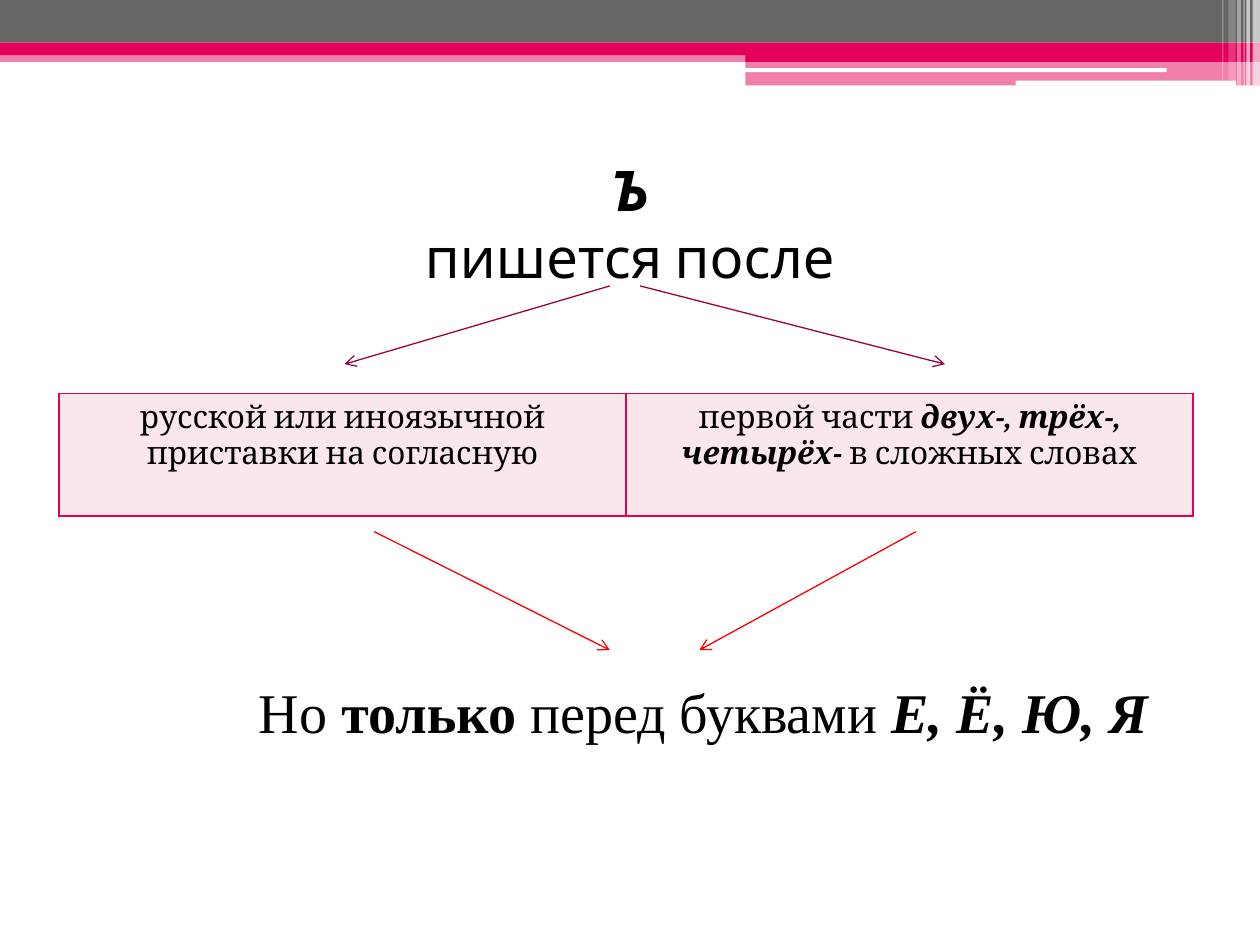
from lxml.etree import SubElement
from pptx import Presentation
from pptx.dml.color import RGBColor
from pptx.enum.shapes import MSO_CONNECTOR, MSO_SHAPE
from pptx.enum.text import MSO_ANCHOR, PP_ALIGN
from pptx.oxml.ns import qn
from pptx.util import Pt

COLORS = {"pink": "E40059", "gray": "666666", "white": "FFFFFF", "black": "000000",
          "cell": "FAE7EA", "plum": "9C0042", "red": "FF0000"}

# Content: each paragraph is a list of (text, style) runs, b = bold, i = italic
TITLE = [[("Ъ", "bi"), ("\n", ""), ("пишется после", "")]]
CELLS = [
    [[("русской или иноязычной", "")], [("приставки на согласную", "")]],
    [[("первой части ", ""), ("двух-, трёх-, четырёх-", "bi"), (" в сложных словах", "")]],
]
CONCLUSION = [[("Но ", ""), ("только", "b"), (" перед буквами ", ""), ("Е, Ё, Ю, Я", "bi")]]

# Header decoration: left, top, width, height, color, opacity in percent
BANDS = [
    (0, 28.8, 720, 6.6, "pink", 50),
    (0, 0, 720, 24.4, "gray", 100),
    (0, 24.4, 720, 7.2, "pink", 100),
    (426, 28.2, 294, 7.2, "pink", 100),
    (426, 34.6, 294, 14.2, "pink", 50),
]
BARS = [(425.5, 39, 241.2, 2.2), (580.3, 46.1, 126, 2.9)]
STRIPES = [  # left, width, height, opacity
    (715.8, 4.2, 48.8, 65), (712.2, 2.1, 48.8, 65), (710.6, 0.7, 48.8, 60),
    (707, 2.1, 48.8, 40), (702, 4.2, 46.1, 20), (698.4, 0.7, 46.1, 30),
]
ARROWS = [  # start, end, color
    ((348.5, 163.4), (196.9, 208.1), "plum"),
    ((365.8, 163.4), (540, 208.1), "plum"),
    ((523.4, 303.8), (399.6, 371.5), "red"),
    ((213.8, 303.8), (348.5, 371.5), "red"),
]


def rgb(name):
    return RGBColor.from_string(COLORS[name])


def write_text(frame, paragraphs, *, font, size, color="black"):
    frame.word_wrap = True
    for index, runs in enumerate(paragraphs):
        paragraph = frame.add_paragraph() if index else frame.paragraphs[0]
        paragraph.alignment = PP_ALIGN.CENTER
        for text, style in runs:
            if text == "\n":
                paragraph.add_line_break()
                continue
            run = paragraph.add_run()
            run.text = text
            run.font.name, run.font.size = font, Pt(size)
            run.font.bold, run.font.italic = "b" in style, "i" in style
            run.font.color.rgb = rgb(color)


def add_text_box(slide, box, paragraphs, *, left_inset=7.2, bottom_inset=3.6, **text_format):
    frame = slide.shapes.add_textbox(*map(Pt, box)).text_frame
    frame.vertical_anchor = MSO_ANCHOR.MIDDLE
    frame.margin_left, frame.margin_bottom = Pt(left_inset), Pt(bottom_inset)
    write_text(frame, paragraphs, **text_format)


def add_block(slide, box, color, opacity=100, kind=MSO_SHAPE.RECTANGLE):
    shape = slide.shapes.add_shape(kind, *map(Pt, box))
    shape.shadow.inherit = False
    shape.line.fill.background()
    shape.fill.solid()
    shape.fill.fore_color.rgb = rgb(color)
    if opacity < 100:
        fill_color = shape.fill._xPr.find(".//" + qn("a:srgbClr"))
        SubElement(fill_color, qn("a:alpha"), val=str(opacity * 1000))


def add_arrow(slide, start, end, color):
    arrow = slide.shapes.add_connector(MSO_CONNECTOR.STRAIGHT, *map(Pt, start + end))
    arrow.line.color.rgb = rgb(color)
    arrow.line.width = Pt(0.75)
    SubElement(arrow.line._get_or_add_ln(), qn("a:tailEnd"), type="arrow")
    SubElement(arrow._element.spPr, qn("a:effectLst"))


def add_borders(cell, color, width):
    properties = cell._tc.get_or_add_tcPr()
    for side in ("lnL", "lnR", "lnT", "lnB"):
        line = SubElement(properties, qn(f"a:{side}"), w=str(Pt(width)))
        SubElement(SubElement(line, qn("a:solidFill")), qn("a:srgbClr"), val=COLORS[color])


def main():
    presentation = Presentation()
    presentation.slide_width, presentation.slide_height = Pt(720), Pt(540)
    slide = presentation.slides.add_slide(presentation.slide_layouts[6])

    # Header
    for *box, color, opacity in BANDS:
        add_block(slide, box, color, opacity)
    for box in BARS:
        add_block(slide, box, "white", kind=MSO_SHAPE.ROUNDED_RECTANGLE)
    for left, width, height, opacity in STRIPES:
        add_block(slide, (left, 0, width, height), "white", opacity)

    # Title, centred above the arrows
    add_text_box(slide, (36, 67.7, 648, 157.7), TITLE, bottom_inset=42, font="Cabin", size=32)

    # Table with the two cases
    table = slide.shapes.add_table(1, 2, Pt(33.8), Pt(224.8), Pt(648), Pt(70)).table
    table.first_row = table.horz_banding = False
    for cell, paragraphs in zip(table.iter_cells(), CELLS):
        add_borders(cell, "pink", 1)
        cell.fill.solid()
        cell.fill.fore_color.rgb = rgb("cell")
        write_text(cell.text_frame, paragraphs, font="Cambria", size=18)

    # Conclusion, shifted right by its left inset
    add_text_box(slide, (22.3, 382.3, 675.4, 85), CONCLUSION, left_inset=91.2,
                 bottom_inset=40, font="Times New Roman", size=32)

    # Arrows
    for start, end, color in ARROWS:
        add_arrow(slide, start, end, color)

    presentation.save("out.pptx")


if __name__ == "__main__":
    main()
